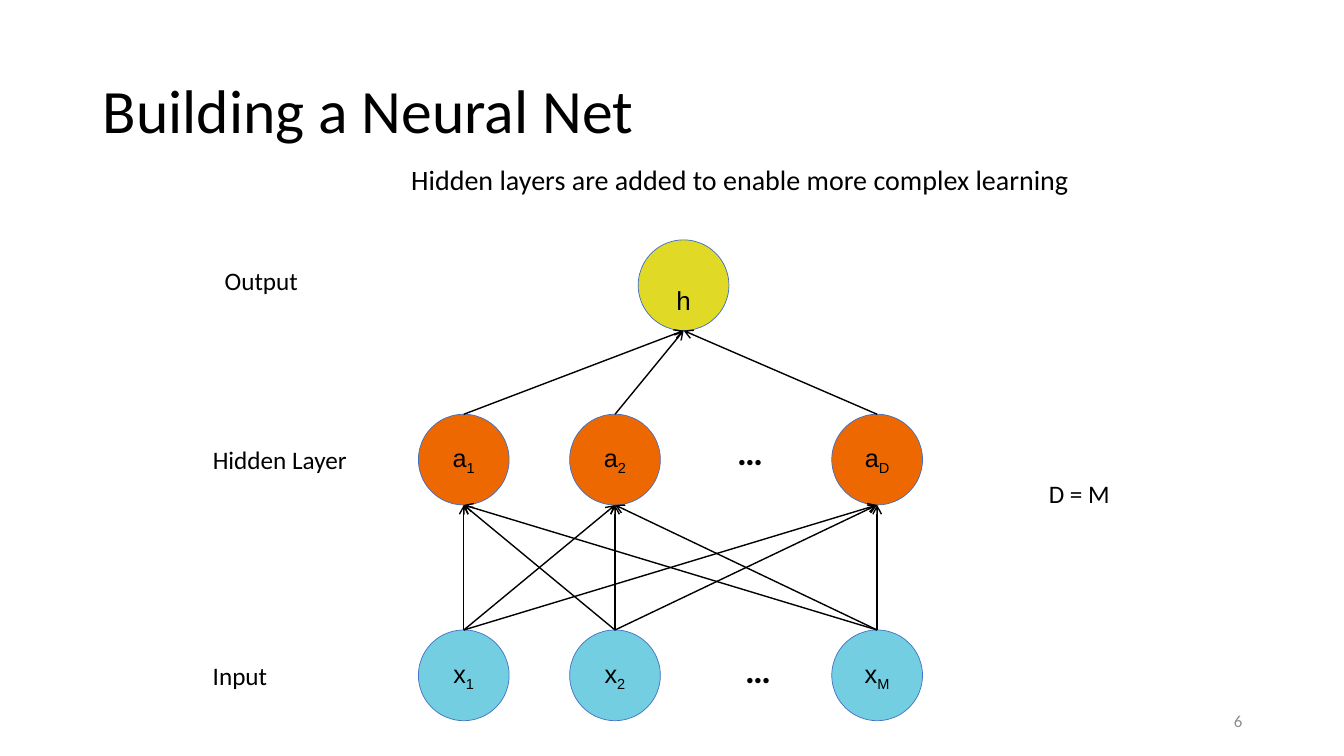
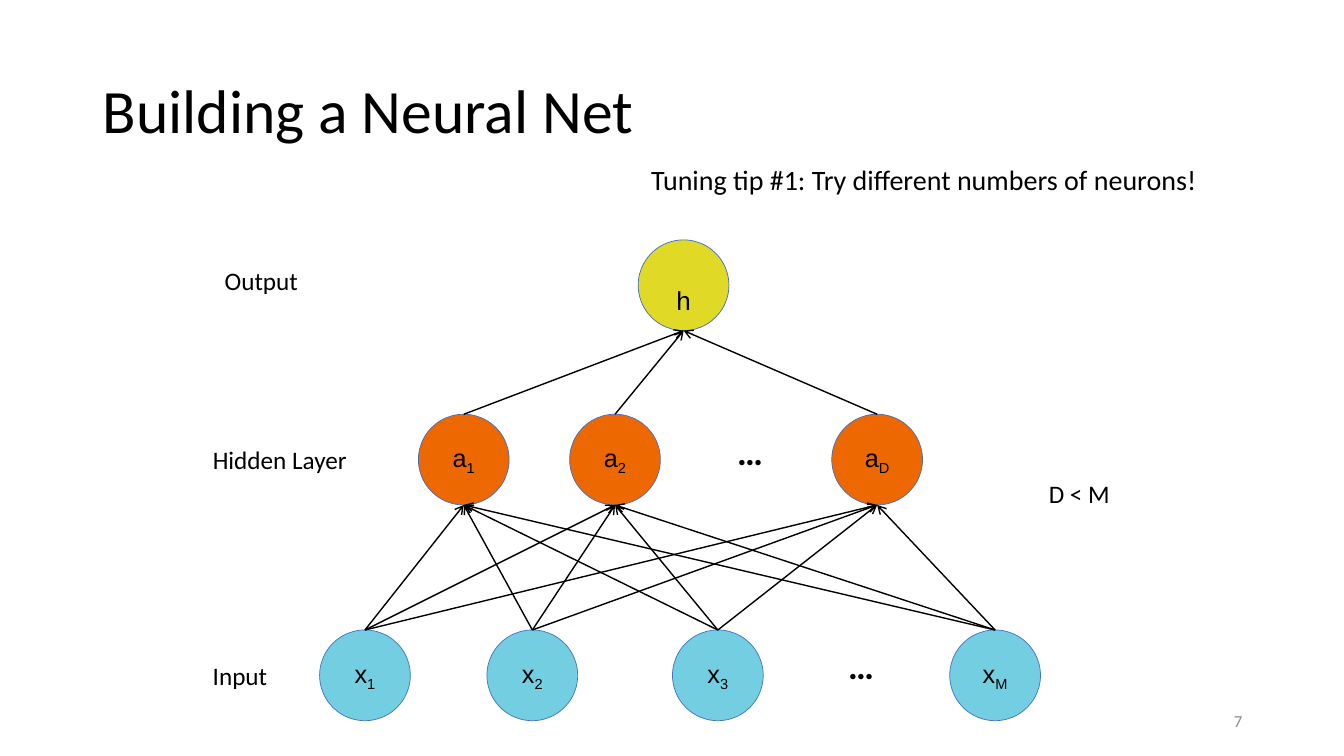
import pptx
import pptx.dml.color
import pptx.enum.shapes
import pptx.enum.text
import pptx.oxml.ns
import pptx.util
from lxml import etree

Inches = pptx.util.Inches
Pt = pptx.util.Pt
ALIGN = pptx.enum.text.PP_ALIGN
ANCHOR = pptx.enum.text.MSO_ANCHOR
AUTO_SIZE = pptx.enum.text.MSO_AUTO_SIZE
qn = pptx.oxml.ns.qn

COLOURS = {
    "text": "000000",
    "page number": "8C8C8C",
    "input": "72CEE0",
    "hidden": "EE6802",
    "output": "E0D925",
    "input outline": "4472C4",
    "outline": "3F6FC3",
}
TEXT_FORMATS = {
    "title": {"name": "Calibri", "size": Pt(44)},
    "message": {"name": "Calibri", "size": Pt(20)},
    "label": {"name": "Calibri", "size": Pt(18)},
    "ellipsis": {"name": "Calibri", "size": Pt(26), "bold": True},
    "page number": {"name": "Calibri", "size": Pt(12)},
    "neuron": {"name": "Arial", "size": Pt(18)},
    "output neuron": {"name": "Arial", "size": Pt(32)},
}
TITLE = "Building a Neural Net"
TITLE_BOX = (0.92, 0.4, 11.5, 1.45)
PAGE_BOX = (9.42, 6.95, 3, 0.4)
NETWORK_BOX = (1.65, 2.38, 10.18, 4.77)

# Offsets inside the network box
DIAMETER = 0.9
OUTPUT_TOP, HIDDEN_TOP, INPUT_TOP = 0, 1.73, 3.87
OUTPUT_NEURONS = [(4.68, "h")]
HIDDEN_NEURONS = [(2.5, "a1"), (4, "a2"), (6.6, "aD")]

SLIDES = [
    {
        "page": "6",
        "message": "Hidden layers are added to enable more complex learning",
        "message box": (3.98, 1.56, 6.85, 0.44),
        "relation": "D = M",
        "inputs": [(2.5, "x1"), (4, "x2"), (6.6, "xM")],
        "input gap": (5.58, 3.99),
    },
    {
        "page": "7",
        "message": "Tuning tip #1: Try different numbers of neurons!",
        "message box": (6.36, 1.56, 5.67, 0.44),
        "relation": "D < M",
        "inputs": [(1.52, "x1"), (3.18, "x2"), (5.02, "x3"), (7.77, "xM")],
        "input gap": (6.6, 3.95),
    },
]


def rgb(colour):
    return pptx.dml.color.RGBColor.from_string(COLOURS[colour])


def add_run(paragraph, text, style, colour="text", subscript=False):
    run = paragraph.add_run()
    run.text = text
    for attribute, value in TEXT_FORMATS[style].items():
        setattr(run.font, attribute, value)
    run.font.color.rgb = rgb(colour)
    if subscript:
        run._r.get_or_add_rPr().set("baseline", "-25000")


def add_text(slide, box, text, style, align=ALIGN.LEFT, colour="text", **frame_format):
    frame = slide.shapes.add_textbox(*map(Inches, box)).text_frame
    for attribute, value in ({"word_wrap": True} | frame_format).items():
        setattr(frame, attribute, value)
    paragraph = frame.paragraphs[0]
    paragraph.alignment = align
    add_run(paragraph, text, style, colour)


def add_title(slide, box):
    title = slide.shapes.title
    title.left, title.top, title.width, title.height = map(Inches, box)
    title.text_frame.vertical_anchor = ANCHOR.MIDDLE
    paragraph = title.text_frame.paragraphs[0]
    paragraph.alignment = ALIGN.LEFT
    paragraph.line_spacing = 0.9
    add_run(paragraph, TITLE, "title")


def add_layer(slide, left, top, neurons, layer, outline="outline"):
    """Draw a row of neurons and return the x of each centre."""
    for offset, symbol in neurons:
        neuron = slide.shapes.add_shape(
            pptx.enum.shapes.MSO_SHAPE.FLOWCHART_CONNECTOR,
            *map(Inches, (left + offset, top, DIAMETER, DIAMETER)))
        neuron.shadow.inherit = False
        neuron.fill.solid()
        neuron.fill.fore_color.rgb = rgb(layer)
        neuron.line.color.rgb = rgb(outline)
        neuron.line.width = Pt(0.5)
        frame = neuron.text_frame
        frame.vertical_anchor = ANCHOR.MIDDLE
        frame.margin_left = frame.margin_right = 0
        paragraph = frame.paragraphs[0]
        paragraph.alignment = ALIGN.CENTER
        if layer == "output":
            add_run(paragraph, symbol, "output neuron", subscript=True)
        else:
            add_run(paragraph, symbol[0], "neuron")
            add_run(paragraph, symbol[1:], "neuron", subscript=True)
    return [left + offset + DIAMETER / 2 for offset, _ in neurons]


def connect_layers(slide, sources, source_top, targets, target_top):
    """Draw an arrow from every source neuron up to every target neuron."""
    for target in targets:
        for source in sources:
            arrow = slide.shapes.add_connector(
                pptx.enum.shapes.MSO_CONNECTOR.STRAIGHT,
                *map(Inches, (source, source_top, target, target_top + DIAMETER)))
            arrow.line.color.rgb = rgb("text")
            arrow.line.width = Pt(1)
            etree.SubElement(arrow.line._get_or_add_ln(), qn("a:tailEnd"), type="arrow")
            etree.SubElement(arrow._element.spPr, qn("a:effectLst"))


def add_network(slide, box, content):
    left, top = box[:2]
    output_top, hidden_top, input_top = (
        top + offset for offset in (OUTPUT_TOP, HIDDEN_TOP, INPUT_TOP))
    inputs = add_layer(slide, left, input_top, content["inputs"], "input", "input outline")
    hidden = add_layer(slide, left, hidden_top, HIDDEN_NEURONS, "hidden")
    outputs = add_layer(slide, left, output_top, OUTPUT_NEURONS, "output")
    connect_layers(slide, inputs, input_top, hidden, hidden_top)
    connect_layers(slide, hidden, hidden_top, outputs, output_top)

    for x, y in ((5.5, 1.82), content["input gap"]):
        add_text(slide, (left + x, top + y, 0.58, 0.54), "…", "ellipsis", ALIGN.CENTER,
                 vertical_anchor=ANCHOR.MIDDLE, auto_size=AUTO_SIZE.SHAPE_TO_FIT_TEXT)
    for x, y, width, label, align in (
        (0.48, 0.2, 1.42, "Output", ALIGN.LEFT),
        (0, 1.98, 2.25, "Hidden Layer", ALIGN.CENTER),
        (0.02, 4.12, 1.42, "Input", ALIGN.CENTER),
        (7.93, 2.32, 2.25, content["relation"], ALIGN.CENTER),
    ):
        add_text(slide, (left + x, top + y, width, 0.4), label, "label", align,
                 auto_size=AUTO_SIZE.SHAPE_TO_FIT_TEXT)


def add_network_slide(presentation, content):
    slide = presentation.slides.add_slide(presentation.slide_layouts[5])
    add_title(slide, TITLE_BOX)
    add_network(slide, NETWORK_BOX, content)
    add_text(slide, content["message box"], content["message"], "message",
             word_wrap=False, auto_size=AUTO_SIZE.SHAPE_TO_FIT_TEXT)
    add_text(slide, PAGE_BOX, content["page"], "page number", ALIGN.RIGHT,
             "page number", vertical_anchor=ANCHOR.MIDDLE)


def main():
    presentation = pptx.Presentation()
    presentation.slide_width = Inches(13.33)
    presentation.slide_height = Inches(7.5)
    for content in SLIDES:
        add_network_slide(presentation, content)
    presentation.save("out.pptx")


if __name__ == "__main__":
    main()
